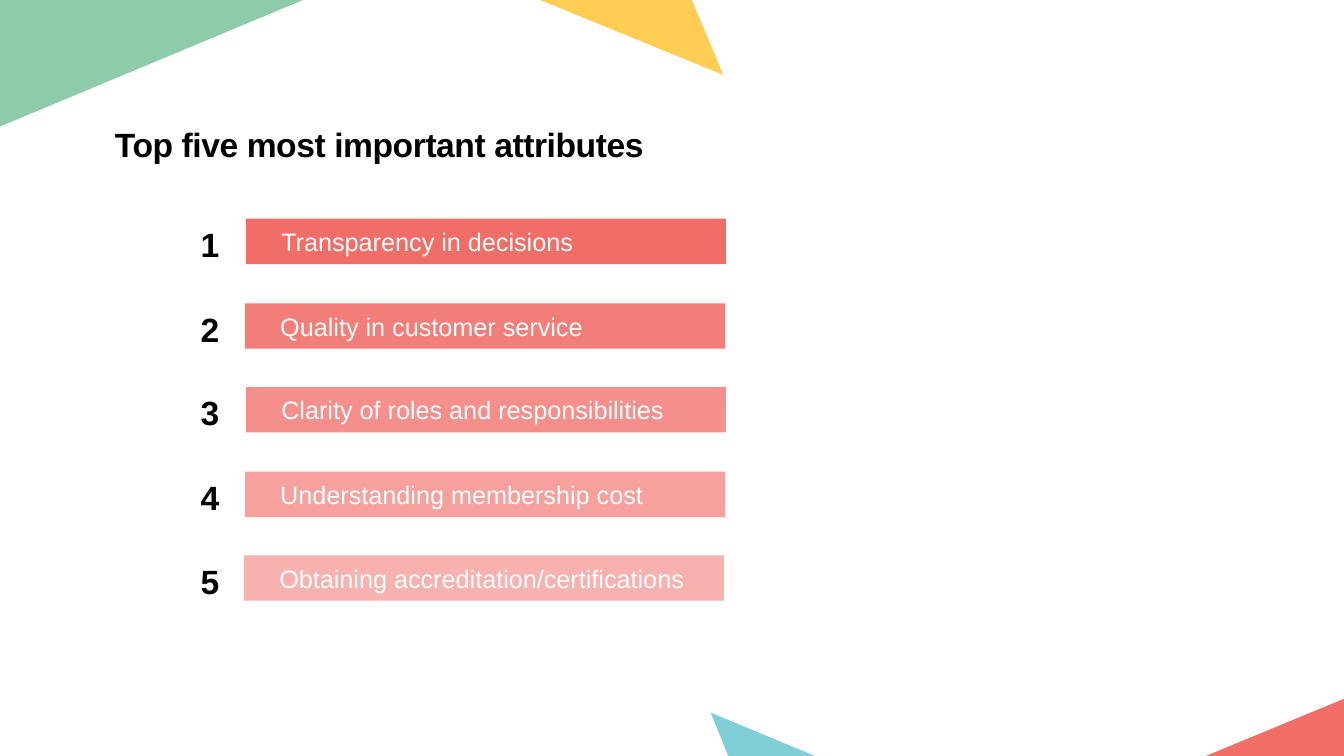
from lxml.etree import SubElement
from pptx import Presentation
from pptx.dml.color import RGBColor
from pptx.enum.shapes import MSO_SHAPE as SHAPE
from pptx.enum.text import MSO_ANCHOR as ANCHOR, MSO_AUTO_SIZE as AUTO_SIZE, PP_ALIGN as ALIGN
from pptx.oxml.ns import qn
from pptx.util import Pt

PX = 9144  # 100 px to the inch
CORAL = "F16D67"
WHITE = "FFFFFF"


def paint(color_format, hex_color):
    color_format.rgb = RGBColor.from_string(hex_color)


def write(shape, text, size, hex_color, bold=False, insets=(0, 1, 0, 0), anchor=ANCHOR.TOP):
    """Put one left-aligned run in a shape; insets are left, top, right, bottom in px."""
    frame = shape.text_frame
    frame.word_wrap = True
    frame.auto_size = AUTO_SIZE.NONE
    frame.vertical_anchor = anchor
    frame.margin_left, frame.margin_top, frame.margin_right, frame.margin_bottom = (
        inset * PX for inset in insets)
    paragraph = frame.paragraphs[0]
    paragraph.alignment = ALIGN.LEFT
    paragraph.space_before = Pt(0)
    run = paragraph.add_run()
    run.text = text
    run.font.name = "Arial"
    run.font.size = Pt(size)
    run.font.bold = bold
    paint(run.font.color, hex_color)
    if bold:
        run._r.get_or_add_rPr().set("spc", "-30")


presentation = Presentation()
presentation.slide_width = 1333 * PX
presentation.slide_height = 750 * PX
slide = presentation.slides.add_slide(presentation.slide_layouts[5])
shapes = slide.shapes

# Corner triangles: colour, corners, how many corners the white edge joins, edge width
triangles = [
    ("8DCBAA", [(0, 133), (328, -4), (0, -4)], 2, 9.69),
    ("FFCD54", [(692, -4), (730, 87), (508, -4)], 3, 9.69),
    ("81CFD6", [(844, 756), (690, 692), (716, 756)], 3, 11.54),
    ("F26F67", [(1334, 684), (1165, 754), (1334, 754)], 2, 11.54),
]
for color, corners, edge_corners, edge_width in triangles:
    for points, closed in ((corners, True), (corners[:edge_corners], False)):
        builder = shapes.build_freeform(*points[0], scale=PX)
        builder.add_line_segments(points[1:], close=closed)
        shape = builder.convert_to_shape()
        shape.shadow.inherit = False
        if closed:
            shape.fill.solid()
            paint(shape.fill.fore_color, color)
            shape.line.fill.background()
        else:
            shape.fill.background()
            paint(shape.line.color, WHITE)
            shape.line.width = Pt(edge_width)

title = shapes.title
title.left, title.top, title.width, title.height = 114 * PX, 122 * PX, 609 * PX, 41 * PX
write(title, "Top five most important attributes", 24, "000000", bold=True)

attributes = [
    (244, "Transparency in decisions"),
    (243, "Quality in customer service"),
    (244, "Clarity of roles and responsibilities"),
    (243, "Understanding membership cost"),
    (242, "Obtaining accreditation/certifications"),
]
for index, (left, attribute) in enumerate(attributes):
    top = 217 + (167 * index + 1) // 2
    bar = shapes.add_shape(SHAPE.RECTANGLE, left * PX, top * PX, 476 * PX, 45 * PX)
    bar.shadow.inherit = False
    bar.line.fill.background()
    bar.fill.solid()
    paint(bar.fill.fore_color, CORAL)
    bar_color = bar._element.spPr.find(qn("a:solidFill")).find(qn("a:srgbClr"))
    SubElement(bar_color, qn("a:alpha")).set("val", str((100 - 12 * index) * 1000))
    write(bar, attribute, 18, WHITE, insets=(35, 5, 10, 5), anchor=ANCHOR.MIDDLE)

    number = shapes.add_textbox(199 * PX, (top + 4) * PX, 29 * PX, 41 * PX)
    write(number, str(index + 1), 24, "000000", bold=True)

presentation.save("out.pptx")
